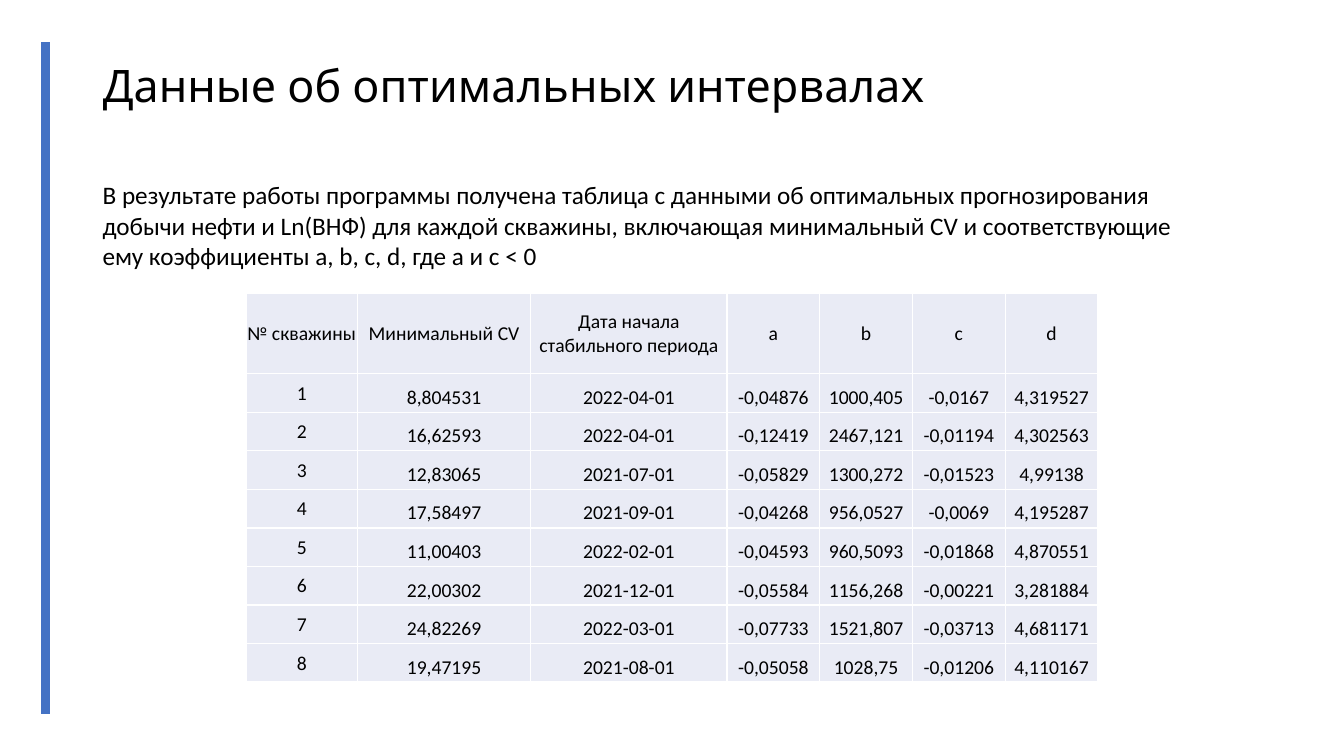
from lxml.etree import SubElement
from pptx import Presentation
from pptx.dml.color import RGBColor
from pptx.enum.shapes import MSO_CONNECTOR
from pptx.enum.text import MSO_ANCHOR, MSO_AUTO_SIZE, PP_ALIGN
from pptx.oxml.ns import qn
from pptx.util import Inches, Pt

TITLE_ONLY = 5
TITLE = "Данные об оптимальных интервалах"
SUMMARY = (
    "В результате работы программы получена таблица с данными об оптимальных "
    "прогнозирования добычи нефти и Ln(ВНФ) для каждой скважины, включающая "
    "минимальный CV и соответствующие ему коэффициенты a, b, c, d, где a и c < 0"
)
HEADERS = ("№ скважины", "Минимальный CV", "Дата начала стабильного периода",
           "a", "b", "c", "d")
WELLS = (
    ("8,804531", "2022-04-01", "-0,04876", "1000,405", "-0,0167", "4,319527"),
    ("16,62593", "2022-04-01", "-0,12419", "2467,121", "-0,01194", "4,302563"),
    ("12,83065", "2021-07-01", "-0,05829", "1300,272", "-0,01523", "4,99138"),
    ("17,58497", "2021-09-01", "-0,04268", "956,0527", "-0,0069", "4,195287"),
    ("11,00403", "2022-02-01", "-0,04593", "960,5093", "-0,01868", "4,870551"),
    ("22,00302", "2021-12-01", "-0,05584", "1156,268", "-0,00221", "3,281884"),
    ("24,82269", "2022-03-01", "-0,07733", "1521,807", "-0,03713", "4,681171"),
    ("19,47195", "2021-08-01", "-0,05058", "1028,75", "-0,01206", "4,110167"),
)
COLUMN_WIDTHS = (8.3, 12.9, 14.6) + (6.9,) * 4
ROW_HEIGHTS = (10.65,) + (5.1,) * len(WELLS)


def color(hex_string):
    return RGBColor.from_string(hex_string)


class SlideBuilder:
    """Draws on a grid of 100 columns by 100 rows."""

    title_font, body_font = "League Spartan", "Calibri"
    ink, accent, cell_fill, border = "000000", "4472C4", "E9EBF5", "FFFFFF"

    def __init__(self, presentation):
        self.column = presentation.slide_width / 100
        self.row = presentation.slide_height / 100
        self.slide = presentation.slides.add_slide(
            presentation.slide_layouts[TITLE_ONLY])

    def across(self, columns):
        return round(columns * self.column)

    def down(self, rows):
        return round(rows * self.row)

    def box(self, left, top, width, height):
        return (self.across(left), self.down(top),
                self.across(width), self.down(height))

    def styled_text(self, text_frame, text, font, size, align=PP_ALIGN.LEFT):
        """Fill the frame with one formatted paragraph and return it."""
        text_frame.text = text
        paragraph = text_frame.paragraphs[0]
        paragraph.alignment = align
        for run in paragraph.runs:
            run.font.name = font
            run.font.size = Pt(size)
            run.font.color.rgb = color(self.ink)
        return paragraph

    def title(self, text, *area):
        shape = self.slide.shapes.title
        shape.left, shape.top, shape.width, shape.height = self.box(*area)
        frame = shape.text_frame
        frame.vertical_anchor = MSO_ANCHOR.MIDDLE
        frame.auto_size = MSO_AUTO_SIZE.NONE
        paragraph = self.styled_text(frame, text, self.title_font, 32)
        paragraph.line_spacing = 0.9

    def text(self, text, *area):
        frame = self.slide.shapes.add_textbox(*self.box(*area)).text_frame
        frame.word_wrap = True
        frame.auto_size = MSO_AUTO_SIZE.SHAPE_TO_FIT_TEXT
        self.styled_text(frame, text, self.body_font, 18)

    def vertical_line(self, left, top, bottom, weight):
        line = self.slide.shapes.add_connector(
            MSO_CONNECTOR.STRAIGHT, self.across(left), self.down(top),
            self.across(left), self.down(bottom))
        line.line.color.rgb = color(self.accent)
        line.line.width = Pt(weight)
        SubElement(line._element.spPr, qn("a:effectLst"))

    def table(self, records, left, top, widths, heights):
        """Centre the header row and first column; set values at the top."""
        table = self.slide.shapes.add_table(
            len(heights), len(widths),
            *self.box(left, top, sum(widths), sum(heights))).table
        table.first_row = table.horz_banding = False
        for column, width in zip(table.columns, widths):
            column.width = self.across(width)
        for row, height in zip(table.rows, heights):
            row.height = self.down(height)
        for row_index, record in enumerate(records):
            for column_index, text in enumerate(record):
                is_value = row_index > 0 and column_index > 0
                self.cell(table.cell(row_index, column_index), text, is_value)

    def cell(self, cell, text, is_value):
        paragraph = self.styled_text(cell.text_frame, text, self.body_font, 14,
                                     PP_ALIGN.CENTER)
        cell.margin_left = cell.margin_right = Inches(0.07 if is_value else 0.01)
        cell.margin_top = Inches(0 if is_value else 0.01)
        cell.margin_bottom = 0
        if is_value:
            cell.vertical_anchor = MSO_ANCHOR.TOP
            paragraph.line_spacing = 1.5
            paragraph.space_after = Pt(8)
        else:
            cell.vertical_anchor = MSO_ANCHOR.MIDDLE
        self.cell_borders(cell)
        cell.fill.solid()
        cell.fill.fore_color.rgb = color(self.cell_fill)

    def cell_borders(self, cell):
        properties = cell._tc.get_or_add_tcPr()
        for side in ("a:lnL", "a:lnR", "a:lnT", "a:lnB"):
            line = SubElement(properties, qn(side), w=str(Pt(1)))
            fill = SubElement(line, qn("a:solidFill"))
            SubElement(fill, qn("a:srgbClr"), val=self.border)


def main():
    presentation = Presentation()
    presentation.slide_width = Inches(13.33)
    presentation.slide_height = Inches(7.5)

    builder = SlideBuilder(presentation)
    builder.title(TITLE, 6.9, 5.3, 86.25, 12.8)
    records = [HEADERS] + [(str(number), *values)
                           for number, values in enumerate(WELLS, start=1)]
    builder.table(records, 18.3, 38.8, COLUMN_WIDTHS, ROW_HEIGHTS)
    builder.text(SUMMARY, 6.9, 23.1, 83.7, 13.5)
    builder.vertical_line(3.4, 5.6, 94.4, 6)
    presentation.save("out.pptx")


if __name__ == "__main__":
    main()
